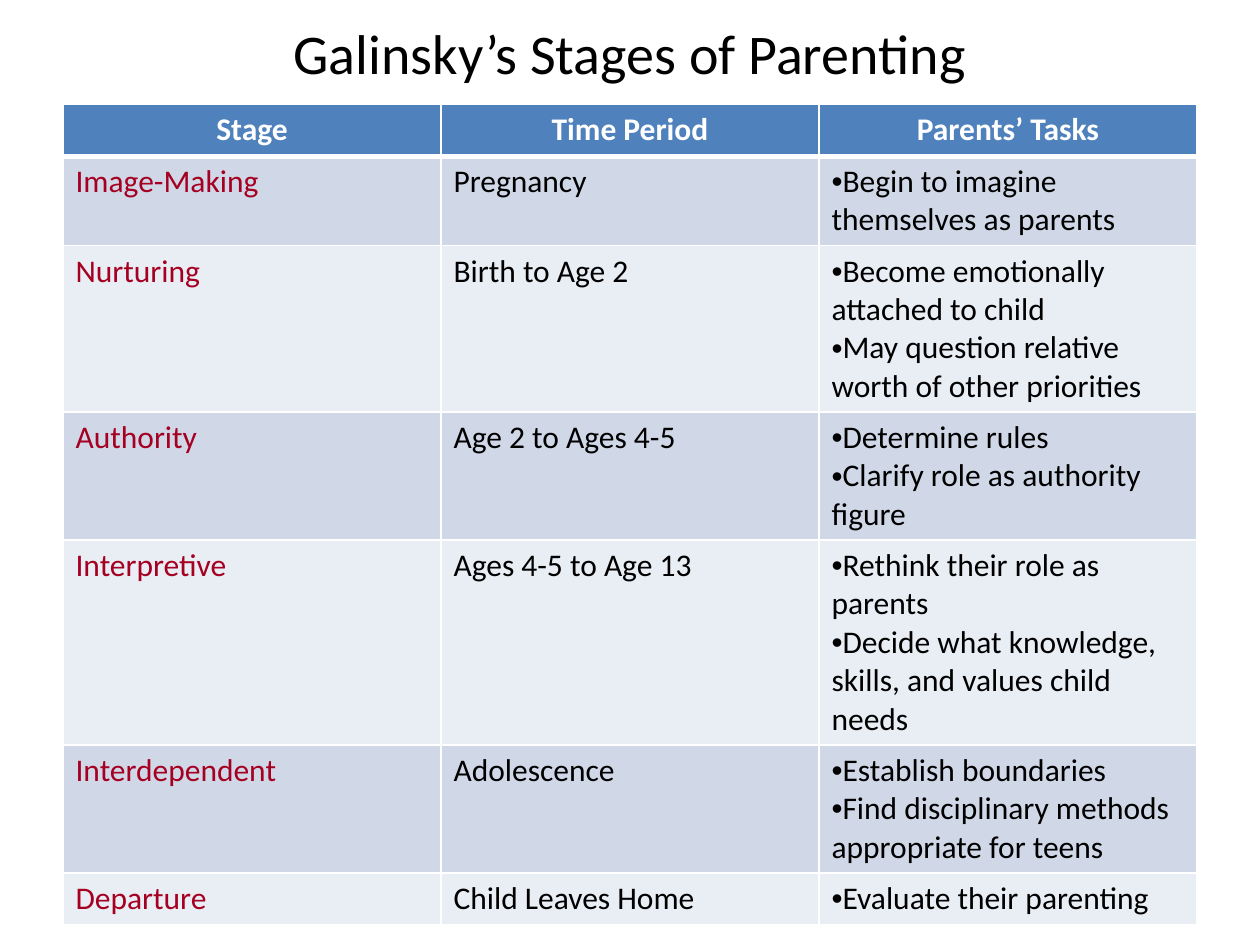
from dataclasses import dataclass

from lxml import etree
from pptx import Presentation
from pptx import util as u
from pptx.dml import color
from pptx.enum import text
from pptx.oxml import ns


@dataclass(frozen=True)
class Theme:
    font: str = "Calibri"
    title_size: int = 32
    table_size: int = 18
    ink: str = "000000"
    stage: str = "A50021"
    white: str = "FFFFFF"
    header: str = "4F81BD"
    bands: tuple = ("D0D8E8", "E9EDF4")
    rule: int = 1
    header_rule: int = 3


HEADINGS = ("Stage", "Time Period", "Parents’ Tasks")
STAGES = (
    ("Image-Making", "Pregnancy", ["Begin to imagine themselves as parents"]),
    ("Nurturing", "Birth to Age 2",
     ["Become emotionally attached to child",
      "May question relative worth of other priorities"]),
    ("Authority", "Age 2 to Ages 4-5",
     ["Determine rules", "Clarify role as authority figure"]),
    ("Interpretive", "Ages 4-5 to Age 13",
     ["Rethink their role as parents",
      "Decide what knowledge, skills, and values child needs"]),
    ("Interdependent", "Adolescence",
     ["Establish boundaries",
      "Find disciplinary methods appropriate for teens"]),
    ("Departure", "Child Leaves Home", ["Evaluate their parenting"]),
)
ROW_HEIGHTS = (0.41, 0.7, 1.3, 1, 1.6, 1, 0.41)


class SlideBuilder:
    def __init__(self, slide, theme):
        self.slide, self.theme = slide, theme

    def add_words(self, paragraph, words, size, ink, bold=False,
                  align=text.PP_ALIGN.LEFT):
        paragraph.alignment = align
        run = paragraph.add_run()
        run.text = words
        font_format = {"name": self.theme.font, "size": u.Pt(size), "bold": bold}
        for key, value in font_format.items():
            setattr(run.font, key, value)
        run.font.color.rgb = color.RGBColor.from_string(ink)

    def title(self, words, left, top, width, height):
        heading = self.slide.shapes.title
        place = {"left": left, "top": top, "width": width, "height": height}
        for key, value in place.items():
            setattr(heading, key, u.Inches(value))
        heading.text_frame.vertical_anchor = text.MSO_ANCHOR.MIDDLE
        self.add_words(heading.text_frame.paragraphs[0], words, self.theme.title_size,
                       self.theme.ink, align=text.PP_ALIGN.CENTER)

    def bullet(self, paragraph):
        properties = paragraph._p.get_or_add_pPr()
        etree.SubElement(properties, ns.qn("a:buFont"), typeface="Arial")
        etree.SubElement(properties, ns.qn("a:buChar"), char="•")

    def borders(self, cell, top, bottom):
        properties = cell._tc.get_or_add_tcPr()
        sides = {"L": self.theme.rule, "R": self.theme.rule, "T": top, "B": bottom}
        # Border lines must come before the fill
        for position, (side, width) in enumerate(sides.items()):
            line = etree.Element(ns.qn(f"a:ln{side}"), w=str(u.Pt(width)))
            fill = etree.SubElement(line, ns.qn("a:solidFill"))
            etree.SubElement(fill, ns.qn("a:srgbClr"), val=self.theme.white)
            properties.insert(position, line)

    def cell(self, cell, lines, fill, ink, top, bottom, bulleted=False, **style):
        cell.fill.solid()
        cell.fill.fore_color.rgb = color.RGBColor.from_string(fill)
        self.borders(cell, top, bottom)
        for index, words in enumerate(lines):
            frame = cell.text_frame
            paragraph = frame.add_paragraph() if index else frame.paragraphs[0]
            self.add_words(paragraph, words, self.theme.table_size, ink, **style)
            if bulleted:
                self.bullet(paragraph)

    def stage_table(self, left, top, width):
        theme = self.theme
        table = self.slide.shapes.add_table(
            len(STAGES) + 1, len(HEADINGS), u.Inches(left), u.Inches(top),
            u.Inches(width), u.Inches(sum(ROW_HEIGHTS))).table
        for row, height in zip(table.rows, ROW_HEIGHTS):
            row.height = u.Inches(height)

        # Header row
        for column, heading in enumerate(HEADINGS):
            self.cell(table.cell(0, column), [heading], theme.header, theme.white,
                      theme.rule, theme.header_rule,
                      bold=True, align=text.PP_ALIGN.CENTER)

        # One banded row per stage
        for row, (stage, period, tasks) in enumerate(STAGES, start=1):
            band = theme.bands[(row - 1) % 2]
            above = theme.header_rule if row == 1 else theme.rule
            entries = (([stage], theme.stage), ([period], theme.ink), (tasks, theme.ink))
            for column, (lines, ink) in enumerate(entries):
                self.cell(table.cell(row, column), lines, band, ink,
                          above, theme.rule, bulleted=lines is tasks)


def main():
    deck = Presentation()
    deck.slide_width, deck.slide_height = u.Inches(10), u.Inches(7.5)
    title_only = deck.slide_layouts[5]
    builder = SlideBuilder(deck.slides.add_slide(title_only), Theme())
    builder.title("Galinsky’s Stages of Parenting", 0.5, 0, 9, 0.83)
    builder.stage_table(0.5, 0.83, 9)
    deck.save("out.pptx")


if __name__ == "__main__":
    main()
